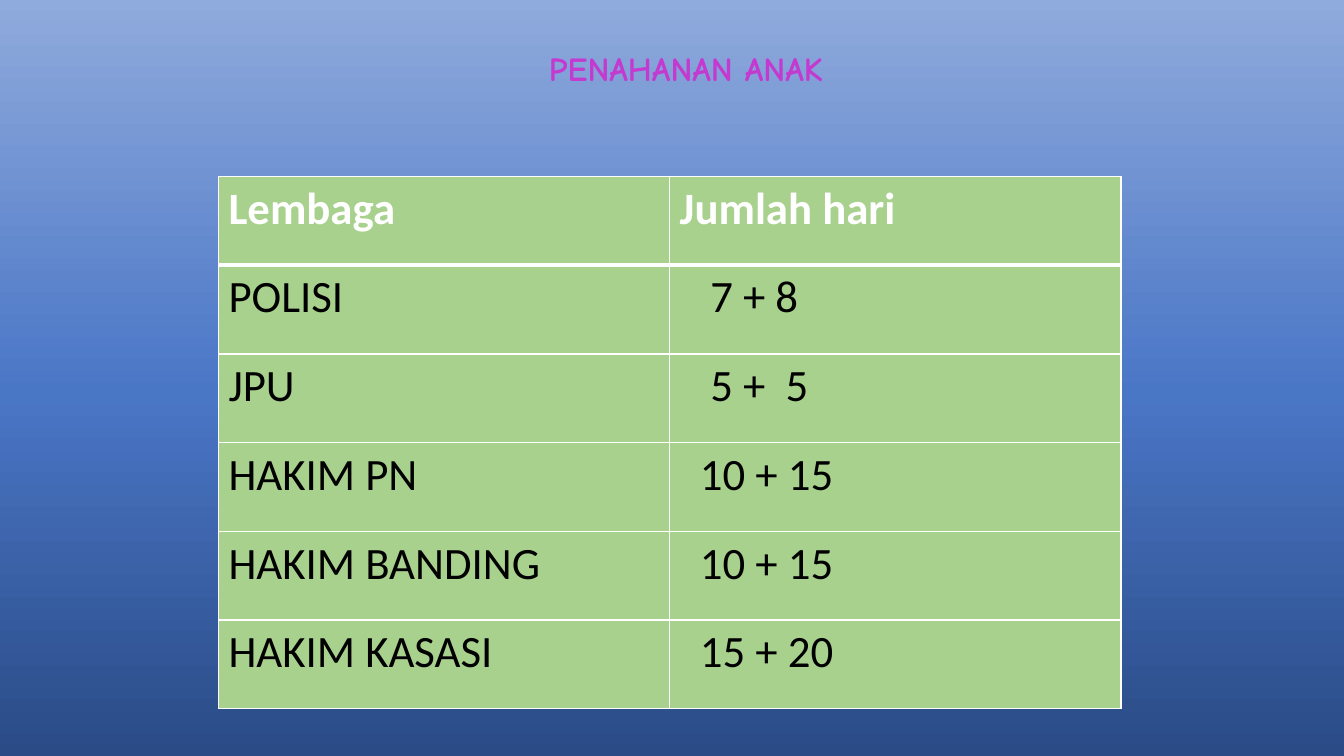
import copy

import pptx
import pptx.util
import pptx.dml.color
import pptx.enum.text
import pptx.oxml
import pptx.oxml.ns

Cm, Pt = pptx.util.Cm, pptx.util.Pt
RGBColor = pptx.dml.color.RGBColor
qn = pptx.oxml.ns.qn

NAVY = RGBColor(0x2A, 0x4B, 0x86)
BLUE = RGBColor(0x4A, 0x76, 0xC6)
PALE_BLUE = RGBColor(0x8F, 0xAA, 0xDC)
MAGENTA = RGBColor(0xC4, 0x39, 0xCF)
GREEN = RGBColor(0xA9, 0xD1, 0x8E)
WHITE = RGBColor(0xFF, 0xFF, 0xFF)
BLACK = RGBColor(0, 0, 0)

TITLE_FORMAT = {"name": "Comic Neue", "size": Pt(24), "bold": True}
HEADER_FORMAT = {"name": "Calibri", "size": Pt(32), "bold": True}
BODY_FORMAT = {"name": "Calibri", "size": Pt(32), "bold": False}

# Institution, days of detention, indent of the days
HEADER = ("Lembaga", "Jumlah hari", Cm(0))
DETENTION = [
    ("POLISI", "7 + 8", Cm(0.77)),
    ("JPU", "5 +  5", Cm(0.77)),
    ("HAKIM PN", "10 + 15", Cm(0.51)),
    ("HAKIM BANDING", "10 + 15", Cm(0.51)),
    ("HAKIM KASASI", "15 + 20", Cm(0.51)),
]


def write(p, text, fmt, color):
    r = p.add_run()
    r.text = text
    for name, value in fmt.items():
        setattr(r.font, name, value)
    r.font.color.rgb = color


def set_background(slide, stops):
    fill = slide.background.fill
    fill.gradient()
    fill.gradient_angle = 90
    gs_list = next(slide.element.iter(qn("a:gsLst")))
    while len(gs_list) < len(stops):
        gs_list.append(copy.deepcopy(gs_list[0]))
    for stop, (position, color) in zip(fill.gradient_stops, stops):
        stop.position = position
        stop.color.rgb = color


def add_title(slide, text, left, top, width, height):
    tf = slide.shapes.add_textbox(left, top, width, height).text_frame
    tf.word_wrap = True
    tf.vertical_anchor = pptx.enum.text.MSO_ANCHOR.MIDDLE
    p = tf.paragraphs[0]
    p.alignment = pptx.enum.text.PP_ALIGN.CENTER
    p.line_spacing = 0.9
    write(p, text, TITLE_FORMAT, MAGENTA)


def set_borders(cell, widths):
    tc_pr = cell._tc.get_or_add_tcPr()
    for i, (side, width) in enumerate(widths.items()):
        tc_pr.insert(i, pptx.oxml.parse_xml(
            f'<a:ln{side} {pptx.oxml.ns.nsdecls("a")} w="{Pt(width)}">'
            f'<a:solidFill><a:srgbClr val="{WHITE}"/></a:solidFill></a:ln{side}>'))


def add_detention_table(slide, left, top, width, height):
    rows = [HEADER] + DETENTION
    table = slide.shapes.add_table(len(rows), 2, left, top, width, height).table
    for i, (institution, days, indent) in enumerate(rows):
        fmt, color = (HEADER_FORMAT, WHITE) if i == 0 else (BODY_FORMAT, BLACK)
        # A heavy rule parts the header from the body
        widths = {"L": 1, "R": 1, "T": 3 if i == 1 else 1, "B": 3 if i == 0 else 1}
        for j, text in enumerate((institution, days)):
            cell = table.cell(i, j)
            cell.fill.solid()
            cell.fill.fore_color.rgb = GREEN
            cell.margin_left = Cm(0.25) + j * indent
            write(cell.text_frame.paragraphs[0], text, fmt, color)
            set_borders(cell, widths)


def main():
    prs = pptx.Presentation()
    prs.slide_width, prs.slide_height = Cm(33.87), Cm(19.05)
    slide = prs.slides.add_slide(prs.slide_layouts[6])

    # Background, from the bottom up
    set_background(slide, [(0, NAVY), (0.48, BLUE), (1, PALE_BLUE)])

    # Title and table
    add_title(slide, "PENAHANAN ANAK", Cm(8.23), Cm(0.84), Cm(18.11), Cm(1.88))
    add_detention_table(slide, Cm(5.51), Cm(4.45), Cm(22.74), Cm(13.41))

    prs.save("out.pptx")


if __name__ == "__main__":
    main()
